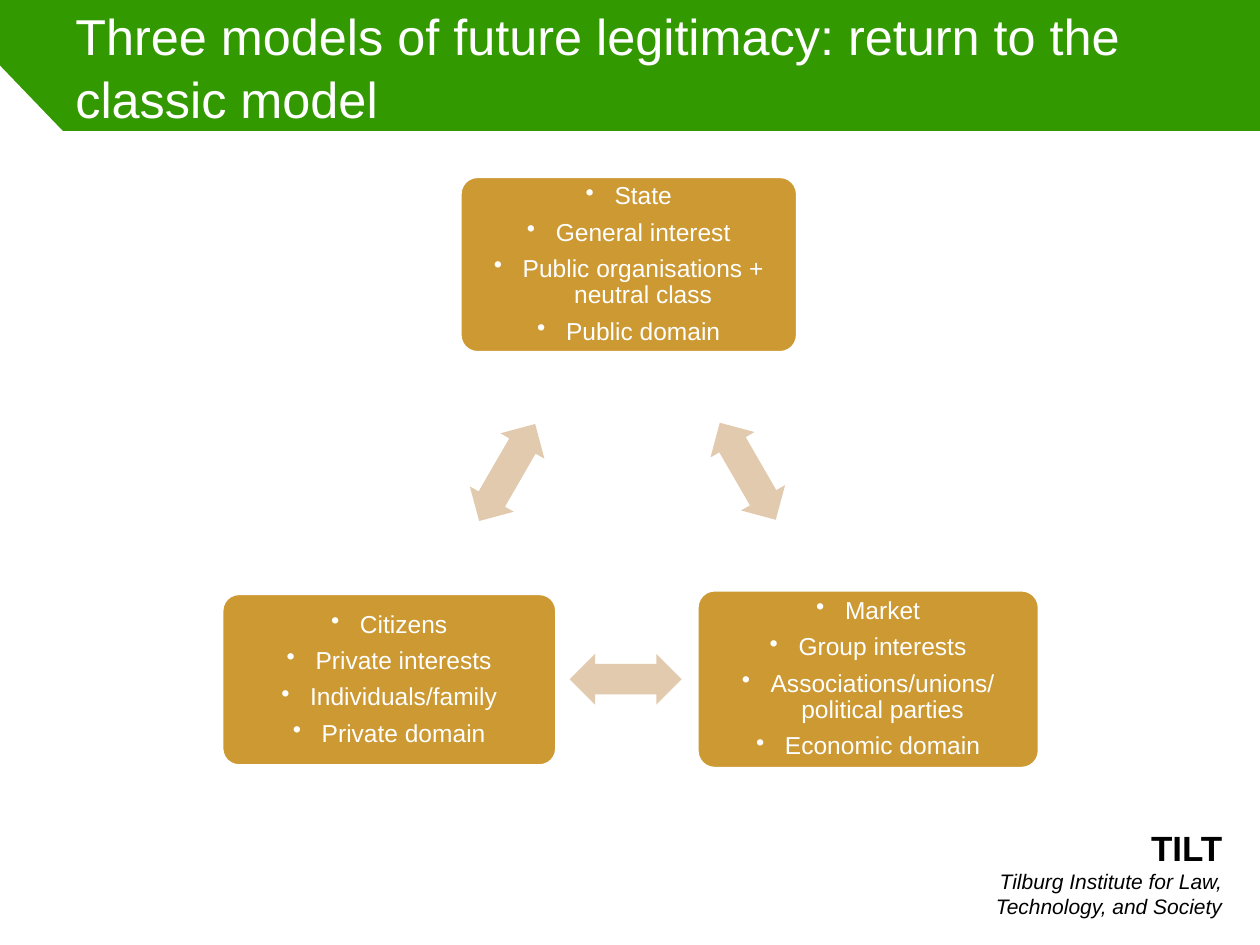
from lxml.etree import SubElement as Sub
from pptx import Presentation
from pptx.dml.color import RGBColor as Rgb
from pptx.enum.shapes import MSO_SHAPE as Shape
from pptx.enum.text import MSO_ANCHOR as Anchor, PP_ALIGN as Align
from pptx.oxml.ns import qn
from pptx.util import Pt

GREEN, GOLD, TAN, WHITE, BLACK = "339900", "CC9933", "E2CAAE", "FFFFFF", "000000"

# Boxes of the triangle: left, top, width, height, lines
BOXES = [
    (262.8, 100.8, 193, 100.8,
     ["State", "General interest", "Public organisations + neutral class",
      "Public domain"]),
    (398.2, 337, 195.8, 102.2,
     ["Market", "Group interests", "Associations/unions/political parties",
      "Economic domain"]),
    (126.7, 339.1, 191.5, 98.6,
     ["Citizens", "Private interests", "Individuals/family", "Private domain"]),
]
# Arrows between the boxes: centre x, centre y, turn
ARROWS = [(427.3, 269.3, 60), (357.5, 388.1, 180), (289.8, 270, 300)]


def paint(fill, color):
    fill.solid()
    fill.fore_color.rgb = Rgb.from_string(color)


def write(para, text, size=14, color=WHITE, bold=False, italic=False):
    run = para.add_run()
    run.text = text
    font = run.font
    font.name, font.size, font.bold, font.italic = "Arial", Pt(size), bold, italic
    font.color.rgb = Rgb.from_string(color)


def add_text(slide, left, top, width, height, anchor=Anchor.TOP):
    frame = slide.shapes.add_textbox(
        Pt(left), Pt(top), Pt(width), Pt(height)).text_frame
    frame.word_wrap = True
    frame.vertical_anchor = anchor
    return frame.paragraphs[0]


def set_bullet(para, indent):
    props = para._p.get_or_add_pPr()
    props.set("marL", str(Pt(indent)))
    props.set("indent", str(-Pt(indent)))
    Sub(props, qn("a:buChar")).set("char", "•")


def add_panel(slide):
    build = slide.shapes.build_freeform(Pt(36), Pt(75))
    build.add_line_segments(
        [(Pt(x), Pt(y)) for x, y in
         [(0, 37.5), (0, 540), (720, 540), (720, 75)]], close=True)
    panel = build.convert_to_shape()
    panel.shadow.inherit = False
    paint(panel.fill, WHITE)
    panel.line.fill.background()


def add_box(slide, left, top, width, height, lines):
    box = slide.shapes.add_shape(
        Shape.ROUNDED_RECTANGLE, Pt(left), Pt(top), Pt(width), Pt(height))
    box.adjustments[0] = 0.1
    box.shadow.inherit = False
    paint(box.fill, GOLD)
    paint(box.line.fill, WHITE)
    box.line.width = Pt(2)
    frame = box.text_frame
    frame.word_wrap = True
    frame.vertical_anchor = Anchor.MIDDLE
    for side in ("left", "top", "right", "bottom"):
        setattr(frame, f"margin_{side}", Pt(4.2))
    for i, line in enumerate(lines):
        para = frame.add_paragraph() if i else frame.paragraphs[0]
        set_bullet(para, 16.5)
        para.alignment = Align.CENTER
        para.line_spacing = 0.9
        para.space_after = Pt(5.6)
        write(para, line)


def add_arrow(slide, x, y, turn, width=64, height=29):
    arrow = slide.shapes.add_shape(
        Shape.LEFT_RIGHT_ARROW, Pt(x - width / 2), Pt(y - height / 2),
        Pt(width), Pt(height))
    arrow.adjustments[0], arrow.adjustments[1] = 0.6, 0.5
    arrow.rotation = turn
    arrow.shadow.inherit = False
    paint(arrow.fill, TAN)
    arrow.line.fill.background()


def main():
    deck = Presentation()
    deck.slide_width, deck.slide_height = Pt(720), Pt(540)
    slide = deck.slides.add_slide(deck.slide_layouts[6])

    # Green ground with the white panel on it
    paint(slide.background.fill, GREEN)
    add_panel(slide)

    # Title
    title = add_text(slide, 36, 0, 648, 75, Anchor.MIDDLE)
    title.line_spacing = 1.04
    write(title, "Three models of future legitimacy: return to the classic model",
          size=28.8)

    # Institute name
    name = add_text(slide, 524.2, 468.7, 181.4, 60.5)
    name.alignment = Align.RIGHT
    write(name, "TILT", size=20, color=BLACK, bold=True)
    name.add_line_break()
    write(name, "Tilburg Institute for Law, Technology, and Society",
          size=12, color=BLACK, italic=True)

    # Triangle of boxes and arrows
    for box in BOXES:
        add_box(slide, *box)
    for arrow in ARROWS:
        add_arrow(slide, *arrow)

    deck.save("out.pptx")


if __name__ == "__main__":
    main()
